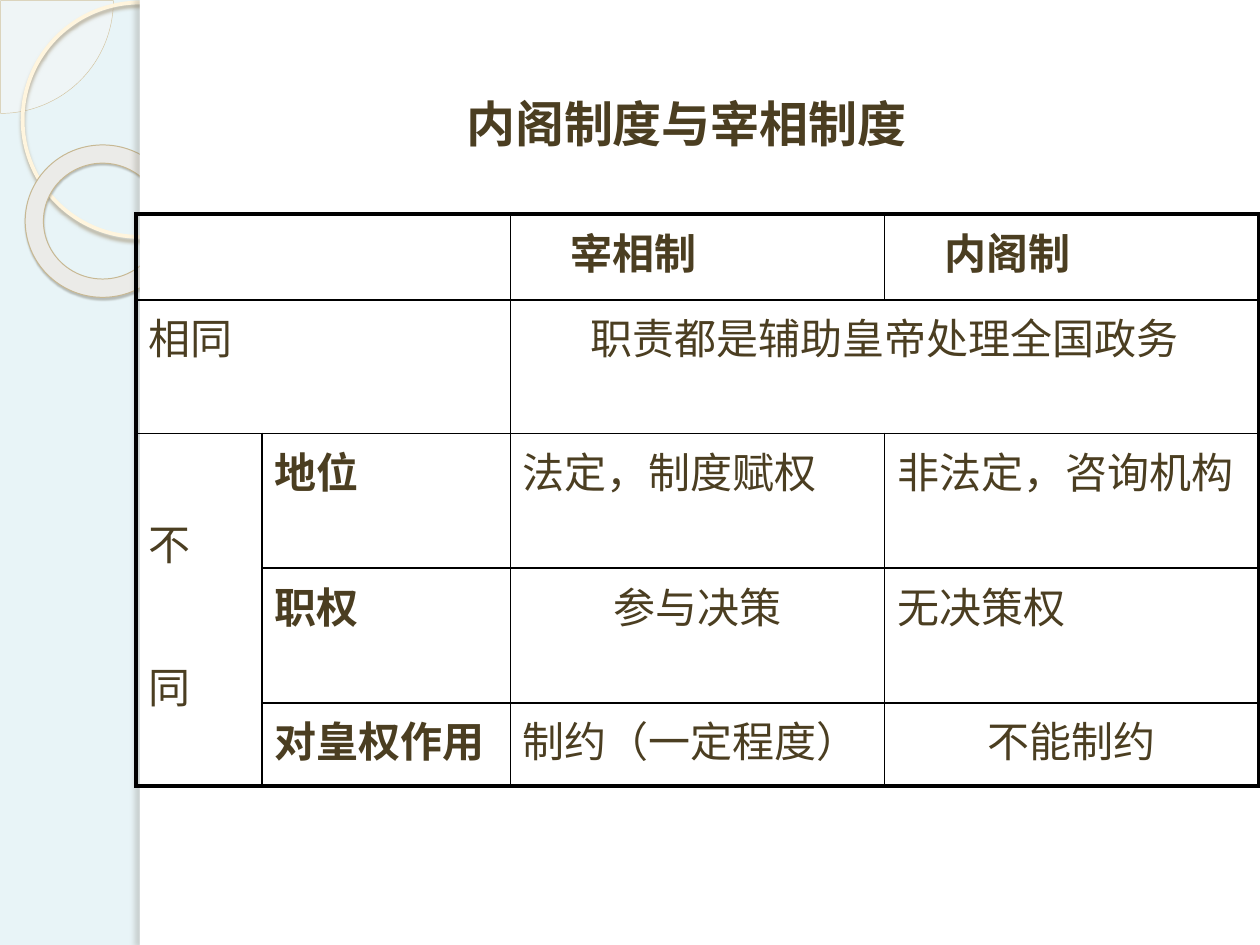
from lxml.etree import SubElement as Sub
from pptx import Presentation
from pptx.dml.color import RGBColor as RGB
from pptx.enum.shapes import MSO_SHAPE as Kind
from pptx.enum.text import MSO_ANCHOR as Anchor, PP_ALIGN as Align
from pptx.oxml.ns import qn
from pptx.util import Inches, Pt

COLORS = {
    "back": "E8F4F7", "white": "FFFFFF", "text": "4B3E21", "rule": "000000",
    "cream": "FEFAF4", "tan": "D3C39F", "ring": "FFF5DE", "donut": "EBEBE8",
    "edge": "C7B893", "warm": "B0A68F", "dark": "5A5444", "gray": "736F63",
}
FONT = "Noto Sans CJK SC"
COLS = [1, 1.97, 2.97, 2.97]
ROWS = [0.68, 1.06, 1.07, 1.07, 0.66]
MERGES = [(0, 0, 0, 1), (1, 0, 1, 1), (1, 2, 1, 3), (2, 0, 4, 0)]
HEAD = {"bold": True, "indent": 0.38}
BOLD = {"bold": True}
MID = {"align": Align.CENTER}
CELLS = {
    (0, 2): ("宰相制", HEAD),
    (0, 3): ("内阁制", HEAD),
    (1, 0): ("相同", {}),
    (1, 2): ("职责都是辅助皇帝处理全国政务", MID),
    (2, 0): ("不\n同", {"top": 0.62, "gap": 47}),
    (2, 1): ("地位", BOLD),
    (2, 2): ("法定，制度赋权", {}),
    (2, 3): ("非法定，咨询机构", {}),
    (3, 1): ("职权", BOLD),
    (3, 2): ("参与决策", MID),
    (3, 3): ("无决策权", {}),
    (4, 1): ("对皇权作用", BOLD),
    (4, 2): ("制约（一定程度）", {}),
    (4, 3): ("不能制约", MID),
}


def rgb(name):
    return RGB.from_string(COLORS[name])


def assign(item, values):
    for key, value in values.items():
        setattr(item, key, value)


def write(frame, text, size, bold=False, align=Align.LEFT, indent=0, gap=0):
    frame.text = text
    for i, para in enumerate(frame.paragraphs):
        assign(para, {"alignment": align, "space_before": Pt(gap if i else 0)})
        if indent:
            para._p.get_or_add_pPr().set("marL", str(Inches(indent)))
        for run in para.runs:
            assign(run.font, {"size": Pt(size), "bold": bold, "name": FONT})
            run.font.color.rgb = rgb("text")
            Sub(run._r.get_or_add_rPr(), qn("a:ea"), typeface=FONT)


def fade(node, part):
    Sub(node, qn("a:alpha"), val=str(part * 1000))


def shade(shape, color, part, blur, far, turn):
    glow = Sub(shape._element.spPr.find(qn("a:effectLst")), qn("a:outerShdw"),
               blurRad=str(Pt(blur)), dist=str(Pt(far)),
               dir=str(turn * 60000), algn="tl", rotWithShape="0")
    fade(Sub(glow, qn("a:srgbClr"), val=COLORS[color]), part)


def draw(slide, kind, box, fill=None, line=None, width=1):
    shape = slide.shapes.add_shape(kind, *map(Inches, box))
    shape.shadow.inherit = False
    if fill:
        shape.fill.solid()
        shape.fill.fore_color.rgb = rgb(fill)
    else:
        shape.fill.background()
    if line:
        shape.line.color.rgb = rgb(line)
        shape.line.width = Pt(width)
    else:
        shape.line.fill.background()
    return shape


def add_decor(slide, left, top, width, height):
    pie = draw(slide, Kind.PIE, (left - 0.89, top - 0.89, 1.79, 1.79), "cream", "tan", 0.25)
    pie.adjustments[0], pie.adjustments[1] = 0, 54
    fade(pie._element.spPr.find(qn("a:solidFill"))[0], 33)
    ring = draw(slide, Kind.OVAL, (left + 0.18, top + 0.02, 1.86, 1.86), None, "ring", 2.15)
    shade(ring, "warm", 85, 2, 2, 90)
    donut = draw(slide, Kind.DONUT, (left + 0.2, top + 1.15, 1.23, 1.21), "donut", "edge", 0.58)
    donut.adjustments[0] = 0.12
    shade(donut, "dark", 35, 1, 1.2, 75)
    edge = draw(slide, Kind.RECTANGLE, (left + 1.11, top, 0.08, height), "white")
    shade(edge, "gray", 25, 3, 3, 180)
    draw(slide, Kind.RECTANGLE, (left + 1.11, top, width - 1.11, height), "white")


def add_title(slide, *box):
    title = slide.shapes.title
    slide.shapes._spTree.append(title._element)
    assign(title, dict(zip(("left", "top", "width", "height"), map(Inches, box))))
    frame = title.text_frame
    assign(frame, {"margin_left": Inches(0.35), "margin_top": 0, "margin_bottom": 0,
                   "vertical_anchor": Anchor.TOP, "word_wrap": True})
    write(frame, "内阁制度与宰相制度", 28, bold=True)


def rule(cell, row, col):
    outer = {
        "L": col == 0,
        "R": col + cell.span_width == len(COLS),
        "T": row == 0,
        "B": row + cell.span_height == len(ROWS),
    }
    props = cell._tc.get_or_add_tcPr()
    for side, thick in outer.items():
        line = Sub(props, qn("a:ln" + side), w=str(Pt(2.25 if thick else 1)))
        Sub(Sub(line, qn("a:solidFill")), qn("a:srgbClr"), val=COLORS["rule"])


def add_grid(slide, left, top):
    box = map(Inches, (left, top, sum(COLS), sum(ROWS)))
    table = slide.shapes.add_table(len(ROWS), len(COLS), *box).table
    assign(table, {"first_row": False, "horz_banding": False})
    for col, width in zip(table.columns, COLS):
        col.width = Inches(width)
    for row, height in zip(table.rows, ROWS):
        row.height = Inches(height)
    for r1, c1, r2, c2 in MERGES:
        table.cell(r1, c1).merge(table.cell(r2, c2))
    for r in range(len(ROWS)):
        for c in range(len(COLS)):
            cell = table.cell(r, c)
            if not cell.is_spanned:
                rule(cell, r, c)
            cell.fill.background()
            if (r, c) in CELLS:
                text, style = CELLS[r, c]
                style = dict(style)
                cell.margin_top = Inches(style.pop("top", 0.05))
                write(cell.text_frame, text, 24, **style)


def main():
    deck = Presentation()
    assign(deck, {"slide_width": Inches(10), "slide_height": Inches(7.5)})
    slide = deck.slides.add_slide(deck.slide_layouts[5])
    slide.background.fill.solid()
    slide.background.fill.fore_color.rgb = rgb("back")
    add_decor(slide, 0, 0, 10, 7.5)
    add_title(slide, 3.35, 0.74, 4.4, 0.95)
    add_grid(slide, 1.08, 1.7)
    deck.save("out.pptx")


if __name__ == "__main__":
    main()
